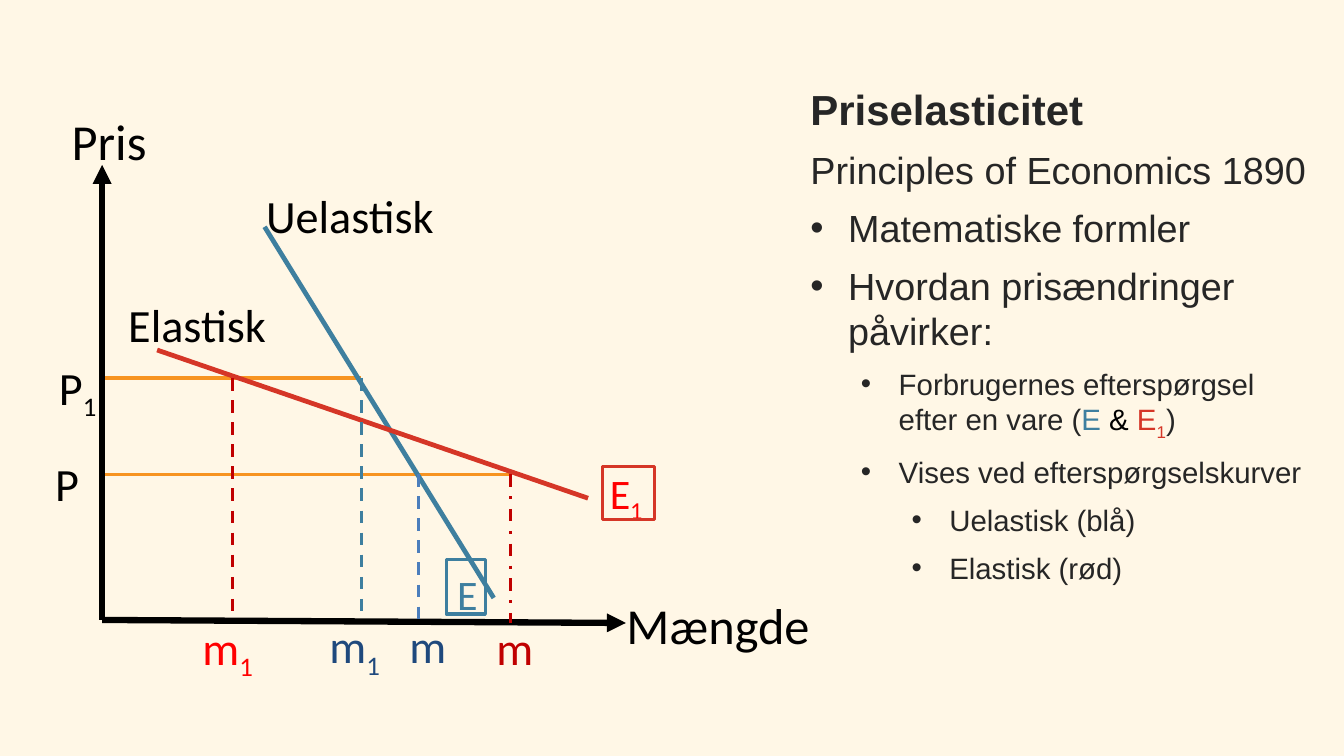
"""Build a slide on price elasticity with two demand curves."""
from dataclasses import dataclass
from typing import NamedTuple, Optional

from lxml.etree import SubElement
from pptx import Presentation
from pptx.dml.color import RGBColor
from pptx.enum.dml import MSO_LINE_DASH_STYLE as Dash
from pptx.enum.shapes import MSO_CONNECTOR, MSO_SHAPE
from pptx.enum.text import MSO_AUTO_SIZE
from pptx.oxml.ns import qn
from pptx.util import Cm, Pt


@dataclass(frozen=True)
class Theme:
    background: str = "FFF7E6"
    ink: str = "262626"
    black: str = "000000"
    blue: str = "3E7F9F"
    mid_blue: str = "4B7EBC"
    navy: str = "1F497D"
    red: str = "D53627"
    bright_red: str = "FF0000"
    dark_red: str = "C00000"
    orange: str = "F79421"
    label_font: str = "Calibri"
    body_font: str = "Arial"
    axis_size: int = 48
    label_size: int = 44
    title_size: int = 40
    lead_size: int = 36
    detail_size: int = 28
    thin: float = 3
    curve: float = 4.5
    axis: float = 6


T = Theme()


class Run(NamedTuple):
    text: str
    color: str = T.ink
    sub: bool = False


class Para(NamedTuple):
    runs: list[Run]
    size: int = T.lead_size
    level: int = 0
    bullet: bool = True
    bold: bool = False


class Label(NamedTuple):
    text: str
    left: float
    top: float
    width: float
    height: float
    color: str = T.black
    size: int = T.label_size
    sub: str = ""
    wrap: bool = False


class Line(NamedTuple):
    x1: float
    y1: float
    x2: float
    y2: float
    color: str
    width: float = T.thin
    dash: Optional[Dash] = None
    arrow: bool = False


class Frame(NamedTuple):
    left: float
    top: float
    width: float
    height: float
    color: str


X0, Y0 = 3.43, 20.83
PRICE_1, PRICE = 12.7, 15.93
RED_M1, BLUE_M1, BLUE_M, RED_M = 7.8, 12.14, 14.05, 17.15

PRICE_LINES = [
    Line(RED_M, PRICE, X0, PRICE, T.orange),
    Line(X0, PRICE_1, BLUE_M1, PRICE_1, T.orange),
]
CURVE_LABELS = [
    Label("E", 15.11, 18.97, 1.22, 1.96, T.blue, T.title_size),
    Label("E", 20.24, 15.57, 2.03, 1.96, T.bright_red, T.title_size, "1", True),
]
FRAMES = [
    Frame(14.99, 18.8, 1.32, 1.83, T.blue),
    Frame(20.24, 15.67, 1.75, 1.78, T.red),
]
LABELS = [
    Label("Pris", 2.16, 3.58, 3.05, 2.31, size=T.axis_size),
    Label("Mængde", 20.8, 19.84, 6.73, 2.31, size=T.axis_size),
    Label("Elastisk", 4.06, 9.83, 7.19, 2.13, wrap=True),
    Label("Uelastisk", 8.69, 6.17, 6.22, 2.13),
    Label("P", 1.73, 11.94, 1.85, 2.13, sub="1"),
    Label("P", 1.6, 15.16, 1.32, 2.13),
    Label("m", 6.55, 20.68, 2.36, 2.13, T.bright_red, sub="1", wrap=True),
    Label("m", 10.82, 20.62, 2.36, 2.13, T.navy, sub="1", wrap=True),
    Label("m", 13.51, 20.62, 1.6, 2.13, T.navy, wrap=True),
    Label("m", 16.43, 20.68, 1.6, 2.13, T.dark_red, wrap=True),
]
GRAPH_LINES = [
    Line(X0, Y0, X0, 5.54, T.black, T.axis, arrow=True),
    Line(X0, Y0, 21.03, 20.93, T.black, T.axis, arrow=True),
    Line(8.89, 7.62, 16.59, 20.09, T.blue, T.curve),
    Line(5.28, 11.76, 19.76, 16.74, T.red, T.curve),
    Line(RED_M1, PRICE_1, RED_M1, Y0, T.dark_red, dash=Dash.DASH),
    Line(BLUE_M1, PRICE_1, BLUE_M1, 20.68, T.blue, dash=Dash.DASH),
    Line(BLUE_M, PRICE, BLUE_M, 20.88, T.mid_blue, dash=Dash.DASH),
    Line(RED_M, PRICE, RED_M, 20.93, T.dark_red, dash=Dash.DASH_DOT),
]
BODY = [
    Para([Run("Priselasticitet")], T.title_size, bullet=False, bold=True),
    Para([Run("Principles of Economics 1890")], bullet=False),
    Para([Run("Matematiske formler")]),
    Para([Run("Hvordan prisændringer påvirker:")]),
    Para([Run("Forbrugernes efterspørgsel efter en vare ("), Run("E ", T.blue),
          Run("& ", T.black), Run("E", T.red), Run("1", T.red, True), Run(")")],
         T.detail_size, 1),
    Para([Run("Vises ved efterspørgselskurver")], T.detail_size, 1),
    Para([Run("Uelastisk (blå)")], T.detail_size, 2),
    Para([Run("Elastisk (rød)")], T.detail_size, 2),
]


def rgb(color: str) -> RGBColor:
    return RGBColor.from_string(color)


def add_run(p, run: Run, size: int, font: str, bold: bool = False) -> None:
    r = p.add_run()
    r.text = run.text
    r.font.size, r.font.name, r.font.bold = Pt(size), font, bold
    r.font.color.rgb = rgb(run.color)
    if run.sub:
        r.font._element.set("baseline", "-25000")


def add_box(s, left: float, top: float, width: float, height: float, wrap: bool):
    tf = s.shapes.add_textbox(Cm(left), Cm(top), Cm(width), Cm(height)).text_frame
    tf.word_wrap = wrap
    tf.auto_size = MSO_AUTO_SIZE.SHAPE_TO_FIT_TEXT
    return tf


def add_label(s, label: Label) -> None:
    tf = add_box(s, label.left, label.top, label.width, label.height, label.wrap)
    runs = [Run(label.text, label.color)]
    if label.sub:
        runs.append(Run(label.sub, label.color, True))
    for run in runs:
        add_run(tf.paragraphs[0], run, label.size, T.label_font)


def add_body(s, paras: list[Para]) -> None:
    tf = add_box(s, 26.9, 2.64, 17.65, 22.4, True)
    tf.margin_left = tf.margin_right = Cm(0.33)
    tf.margin_top = tf.margin_bottom = Cm(0.18)
    for i, para in enumerate(paras):
        p = tf.add_paragraph() if i else tf.paragraphs[0]
        p.level = para.level
        if i:
            p.space_before = Pt(12)
        if para.bullet:
            pPr = p._p.get_or_add_pPr()
            pPr.set("marL", str(Cm(1.27 + 1.7 * para.level)))
            pPr.set("indent", str(Cm(-1.27)))
            SubElement(pPr, qn("a:buFont"), typeface=T.body_font)
            SubElement(pPr, qn("a:buChar"), char="•")
        for run in para.runs:
            add_run(p, run, para.size, T.body_font, para.bold)


def add_line(s, line: Line) -> None:
    c = s.shapes.add_connector(MSO_CONNECTOR.STRAIGHT, Cm(line.x1), Cm(line.y1),
                               Cm(line.x2), Cm(line.y2))
    c.line.color.rgb, c.line.width = rgb(line.color), Pt(line.width)
    if line.dash is not None:
        c.line.dash_style = line.dash
    if line.arrow:
        SubElement(c.line._get_or_add_ln(), qn("a:tailEnd"), type="triangle")
    SubElement(c._element.spPr, qn("a:effectLst"))


def add_frame(s, frame: Frame) -> None:
    sp = s.shapes.add_shape(MSO_SHAPE.RECTANGLE, Cm(frame.left), Cm(frame.top),
                            Cm(frame.width), Cm(frame.height))
    sp.shadow.inherit = False
    sp.fill.background()
    sp.line.color.rgb, sp.line.width = rgb(frame.color), Pt(T.thin)


def main() -> None:
    prs = Presentation()
    prs.slide_width, prs.slide_height = Cm(45.16), Cm(25.4)
    s = prs.slides.add_slide(prs.slide_layouts[6])
    s.background.fill.solid()
    s.background.fill.fore_color.rgb = rgb(T.background)
    for line in PRICE_LINES:
        add_line(s, line)
    for label in CURVE_LABELS:
        add_label(s, label)
    add_body(s, BODY)
    for frame in FRAMES:
        add_frame(s, frame)
    for label in LABELS:
        add_label(s, label)
    for line in GRAPH_LINES:
        add_line(s, line)
    prs.save("out.pptx")


if __name__ == "__main__":
    main()
